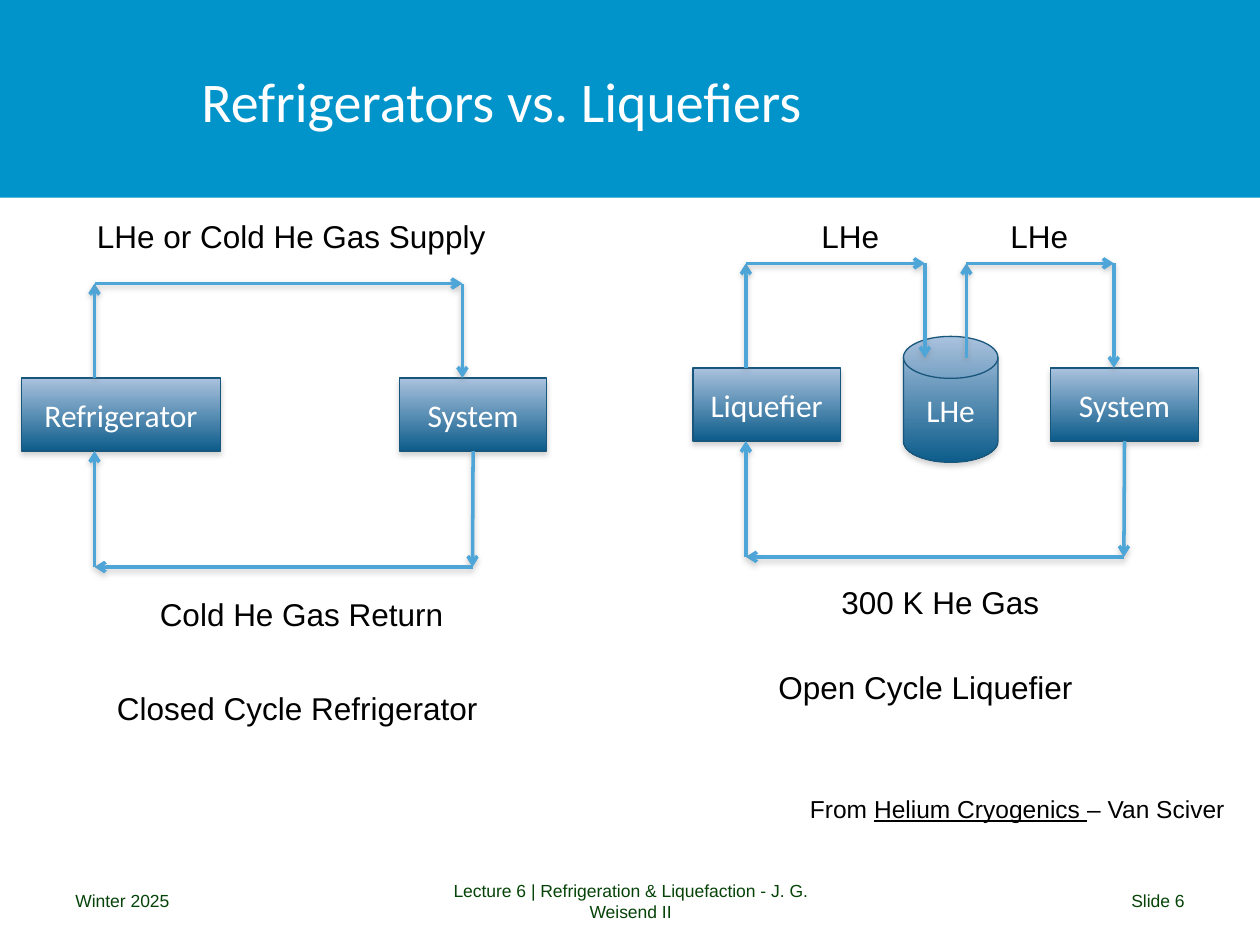
from itertools import pairwise

from lxml.etree import SubElement
from pptx import Presentation
from pptx.dml.color import RGBColor
from pptx.enum.shapes import MSO_CONNECTOR, MSO_SHAPE
from pptx.enum.text import MSO_ANCHOR, PP_ALIGN
from pptx.oxml.ns import qn
from pptx.util import Inches, Pt

BOX_WIDTH, BOX_HEIGHT = 1.17, 0.58


def color(value):
    return RGBColor.from_string(value)


def write(shape, text, size=18, font="Arial", fill="000000", align=PP_ALIGN.LEFT,
          anchor=MSO_ANCHOR.TOP, wrap=False, underlined=""):
    frame = shape.text_frame
    frame.word_wrap = wrap
    frame.vertical_anchor = anchor
    paragraph = frame.paragraphs[0]
    paragraph.alignment = align
    before, match, after = text.partition(underlined) if underlined else (text, "", "")
    for part in filter(None, (before, match, after)):
        run = paragraph.add_run()
        run.text = part
        run.font.size = Pt(size)
        run.font.name = font
        run.font.color.rgb = color(fill)
        if part == match:
            run.font.underline = True


def add_text(shapes, text, left, top, width, height=0.4, **style):
    shape = shapes.add_textbox(Inches(left), Inches(top), Inches(width), Inches(height))
    write(shape, text, **style)
    return shape


def add_shadow(effects, distance, opacity):
    shadow = SubElement(effects, qn("a:outerShdw"), blurRad=str(Pt(3.1)),
                        dist=str(Pt(distance)), dir="5400000", rotWithShape="0")
    shade = SubElement(shadow, qn("a:srgbClr"), val="808080")
    SubElement(shade, qn("a:alpha"), val=str(opacity * 1000))


def add_component(shapes, text, left, top, width=BOX_WIDTH, height=BOX_HEIGHT,
                  kind=MSO_SHAPE.RECTANGLE):
    shape = shapes.add_shape(kind, Inches(left), Inches(top), Inches(width), Inches(height))
    shape.fill.gradient()
    shape.fill.gradient_angle = 270
    for stop, value in zip(shape.fill.gradient_stops, ("AAC2DE", "0C5C8B")):
        stop.color.rgb = color(value)
    shape.line.color.rgb = color("18567B")
    shape.line.width = Pt(0.75)
    shape.shadow.inherit = False
    add_shadow(shape.element.spPr.find(qn("a:effectLst")), 1.8, 35)
    write(shape, text, font="Calibri", fill="FFFFFF", align=PP_ALIGN.CENTER,
          anchor=MSO_ANCHOR.MIDDLE, wrap=True)
    return shape


def add_arrow(shapes, start, end):
    arrow = shapes.add_connector(MSO_CONNECTOR.STRAIGHT, *map(Inches, start + end))
    arrow.line.color.rgb = color("4EA5D8")
    arrow.line.width = Pt(2)
    properties = arrow.element.spPr
    SubElement(properties.find(qn("a:ln")), qn("a:tailEnd"), type="arrow")
    add_shadow(SubElement(properties, qn("a:effectLst")), 1.6, 38)
    return arrow


def add_flow(shapes, left, top, start_x, end_x, start_y, turn_y, end_y):
    corners = [(start_x, start_y), (start_x, turn_y), (end_x, turn_y), (end_x, end_y)]
    points = [(left + x, top + y) for x, y in corners]
    return [add_arrow(shapes, start, end) for start, end in pairwise(points)]


def add_header(slide, left, top, width, height):
    band = slide.shapes.add_shape(MSO_SHAPE.RECTANGLE, Inches(left), Inches(top),
                                  Inches(width), Inches(height))
    band.fill.solid()
    band.fill.fore_color.rgb = color("0094CA")
    band.line.fill.background()
    band.shadow.inherit = False
    add_text(slide.shapes, "Refrigerators vs. Liquefiers", left + 1.5, top + 0.17, 7.81, 1.25,
             size=32, font="Calibri", fill="FFFFFF", anchor=MSO_ANCHOR.MIDDLE, wrap=True)


def add_refrigerator_cycle(slide, left, top):
    shapes = slide.shapes.add_group_shape().shapes
    box_top = 1.33
    box_bottom = box_top + BOX_HEIGHT
    add_component(shapes, "Refrigerator", left, top + box_top, 1.58)
    system = add_component(shapes, "System", left + 3, top + box_top)
    add_flow(shapes, left, top, 0.58, 3.5, box_top, 0.58, box_top)
    return_flow = add_flow(shapes, left, top, 3.58, 0.58, box_bottom, 2.83, box_bottom)
    return_flow[0].begin_connect(system, 2)
    for text, x, y, width in (
        ("LHe or Cold He Gas Supply", 0.5, 0, 3.32),
        ("Cold He Gas Return", 1, 3, 2.47),
        ("Closed Cycle Refrigerator", 0.66, 3.75, 3.09),
    ):
        add_text(shapes, text, left + x, top + y, width)


def add_liquefier_cycle(slide, left, top):
    shapes = slide.shapes.add_group_shape().shapes
    box_top = 1.25
    box_bottom = box_top + BOX_HEIGHT
    add_component(shapes, "Liquefier", left, top + box_top)
    add_component(shapes, "LHe", left + 1.67, top + 1, 0.75, 1,
                  MSO_SHAPE.FLOWCHART_MAGNETIC_DISK)
    system = add_component(shapes, "System", left + 2.84, top + box_top)
    add_flow(shapes, left, top, 0.42, 1.84, box_top, 0.42, 1.17)
    add_flow(shapes, left, top, 2.17, 3.34, 1.17, 0.42, box_top)
    return_flow = add_flow(shapes, left, top, 3.42, 0.42, box_bottom, 2.75, box_bottom)
    return_flow[0].begin_connect(system, 2)
    for text, x, y, width in (
        ("LHe", 0.92, 0, 0.66),
        ("LHe", 2.42, 0, 0.66),
        ("300 K He Gas", 1.08, 2.91, 1.79),
        ("Open Cycle Liquefier", 0.58, 3.58, 2.58),
    ):
        add_text(shapes, text, left + x, top + y, width)


def add_footer(slide, left, top):
    for text, x, width, align in (
        ("Winter 2025", 0, 2.33, PP_ALIGN.LEFT),
        ("Lecture 6 | Refrigeration & Liquefaction - J. G. Weisend II", 2.92, 3.17,
         PP_ALIGN.CENTER),
        ("Slide 6", 6.67, 2.33, PP_ALIGN.RIGHT),
    ):
        add_text(slide.shapes, text, left + x, top, width, size=10, fill="064308",
                 align=align, anchor=MSO_ANCHOR.MIDDLE, wrap=True)


def main():
    presentation = Presentation()
    presentation.slide_width = Inches(10)
    presentation.slide_height = Inches(7.5)
    slide = presentation.slides.add_slide(presentation.slide_layouts[6])
    add_header(slide, 0, 0, 10, 1.57)
    add_footer(slide, 0.5, 6.95)
    add_liquefier_cycle(slide, 5.5, 1.67)
    add_refrigerator_cycle(slide, 0.17, 1.67)
    add_text(slide.shapes, "From Helium Cryogenics – Van Sciver", 6.33, 6.25, 3.51, 0.34,
             size=14, underlined="Helium Cryogenics ")
    presentation.save("out.pptx")


if __name__ == "__main__":
    main()
